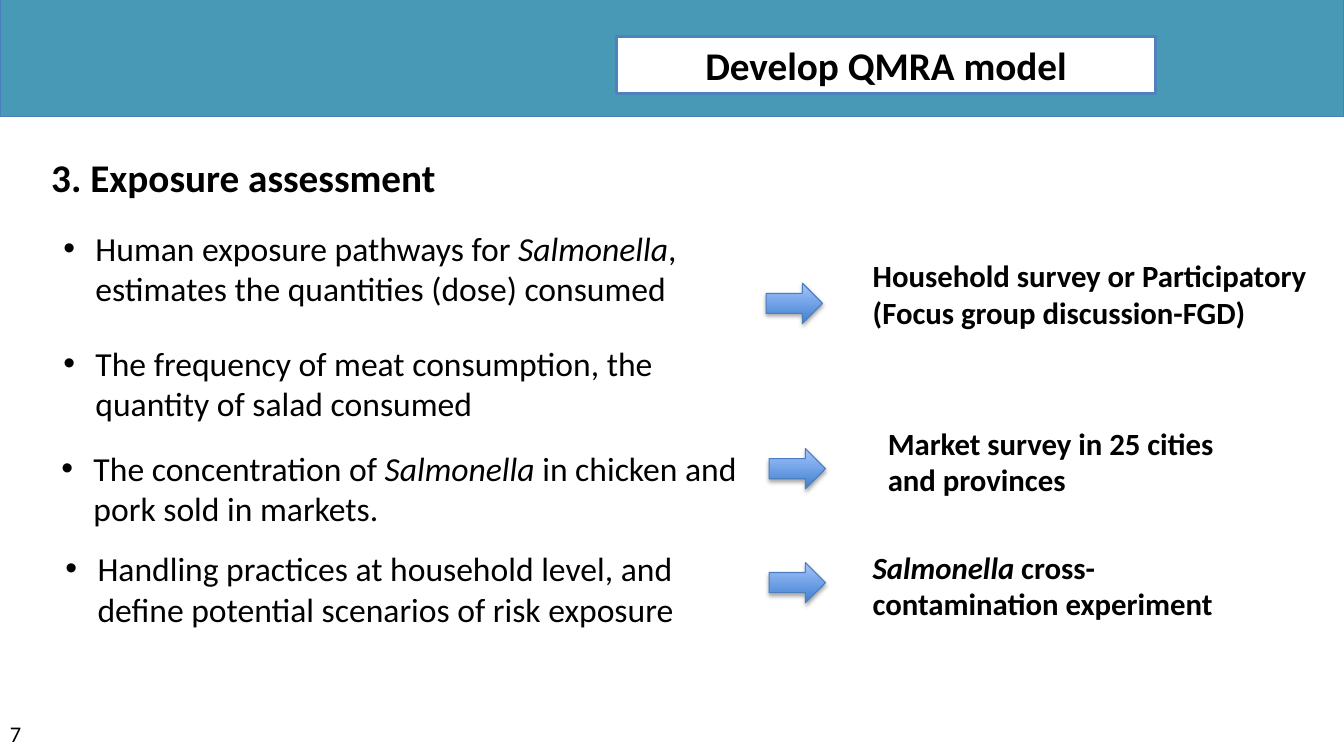
from lxml import etree
from pptx import Presentation
from pptx.dml.color import RGBColor
from pptx.enum.shapes import MSO_SHAPE
from pptx.enum.text import MSO_ANCHOR, PP_ALIGN
from pptx.oxml import parse_xml
from pptx.oxml.ns import nsdecls, qn
from pptx.util import Pt

RECT, ARROW = MSO_SHAPE.RECTANGLE, MSO_SHAPE.RIGHT_ARROW
TOP, MIDDLE = MSO_ANCHOR.TOP, MSO_ANCHOR.MIDDLE
LEFT, CENTER = PP_ALIGN.LEFT, PP_ALIGN.CENTER

TITLE = "Develop QMRA model"
HEADING = "3. Exposure assessment"
PAGE = "7"
BULLETS = [
    ((38.16, 159.12, 511.2, 133.92), 23,
     ["Human exposure pathways for *Salmonella*, estimates the quantities (dose) consumed",
      "The frequency of meat consumption, the quantity of salad consumed"]),
    ((18.72, 316.08, 516.96, 60.48), 41,
     ["The concentration of *Salmonella* in chicken and pork sold in markets."]),
    ((21.6, 388.08, 524.88, 69.12), 41,
     ["Handling practices at household level, and define potential scenarios of risk exposure"]),
]
METHODS = [
    ((611.28, 180, 332.64, 60.48), "Household survey or Participatory (Focus group discussion-FGD)"),
    ((622.08, 299.52, 285.12, 60.48), "Market survey in 25 cities and provinces"),
    ((611.28, 388.08, 285.12, 60.48), "*Salmonella* cross-contamination experiment"),
]
ARROWS = [(547.2, 202.32), (549.36, 320.4), (549.36, 401.76)]
ARROW_SIZE = (40.32, 28.8)
HANG = 23
METHOD_INDENT = 5
BULLET_GAP = 24.5

THEME = {
    "font": "Calibri",
    "text": "000000", "paper": "FFFFFF", "banner": "4799B5",
    "edge": "4B7EBC", "title_edge": "4F81BD",
    "arrow_low": "3F80CE", "arrow_high": "A4C4FF",
    "title": 28, "bullet": 24, "method": 22, "page": 16,
}


def color(name):
    return RGBColor.from_string(THEME[name])


def write(s, text, size, bold=False, align=LEFT, anchor=TOP,
          indent=0, hang=0, gap=0, after=0):
    tf = s.text_frame
    tf.word_wrap = True
    tf.vertical_anchor = anchor
    for i, line in enumerate([text] if isinstance(text, str) else text):
        p = tf.paragraphs[0] if i == 0 else tf.add_paragraph()
        p.alignment = align
        p.space_before = Pt(gap if i else 0)
        p.space_after = Pt(after)
        pPr = p._p.get_or_add_pPr()
        pPr.set("marL", str(Pt(indent)))
        pPr.set("indent", str(-Pt(hang)))
        if hang:
            etree.SubElement(pPr, qn("a:buFont")).set("typeface", "Arial")
            etree.SubElement(pPr, qn("a:buChar")).set("char", "•")
        for j, part in enumerate(line.split("*")):
            if part:
                r = p.add_run()
                r.text = part
                r.font.name = THEME["font"]
                r.font.size = Pt(THEME[size])
                r.font.bold = bold
                r.font.italic = j % 2 == 1
                r.font.color.rgb = color("text")


def add_box(sp, box, text, size, **fmt):
    s = sp.add_textbox(*map(Pt, box))
    write(s, text, size, **fmt)


def add_shape(sp, kind, box, fill, edge, width):
    s = sp.add_shape(kind, *map(Pt, box))
    s.shadow.inherit = False
    s.fill.solid()
    s.fill.fore_color.rgb = color(fill)
    s.line.color.rgb = color(edge)
    s.line.width = Pt(width)
    return s


def add_arrow(sp, pos):
    s = add_shape(sp, ARROW, pos + ARROW_SIZE, "arrow_low", "edge", 0.75)
    s.fill.gradient()
    s.fill.gradient_angle = 90
    for stop, name in zip(s.fill.gradient_stops, ("arrow_low", "arrow_high")):
        stop.color.rgb = color(name)
    effects = s._element.spPr.find(qn("a:effectLst"))
    effects.append(parse_xml(
        f'<a:outerShdw {nsdecls("a")} blurRad="{Pt(3.1)}" dist="{Pt(1.8)}" '
        'dir="5400000" rotWithShape="0"><a:srgbClr val="000000">'
        '<a:alpha val="35000"/></a:srgbClr></a:outerShdw>'))


def main():
    prs = Presentation()
    prs.slide_width, prs.slide_height = Pt(960), Pt(540)
    sp = prs.slides.add_slide(prs.slide_layouts[6]).shapes

    add_shape(sp, RECT, (0, 0, 960, 83.52), "banner", "edge", 0.75)
    title = add_shape(sp, RECT, (440.64, 25.92, 384.48, 41.04), "paper", "title_edge", 2)
    write(title, TITLE, "title", bold=True, align=CENTER, anchor=MIDDLE)
    add_box(sp, (29.52, 105.84, 437.76, 41.04), HEADING, "title", bold=True, after=6)

    for box, indent, lines in BULLETS:
        add_box(sp, box, lines, "bullet", indent=indent, hang=HANG, gap=BULLET_GAP)
    for box, text in METHODS:
        add_box(sp, box, text, "method", bold=True, indent=METHOD_INDENT)
    for pos in ARROWS:
        add_arrow(sp, pos)
    add_box(sp, (0, 511.2, 60.48, 28.8), PAGE, "page")

    prs.save("out.pptx")


if __name__ == "__main__":
    main()
